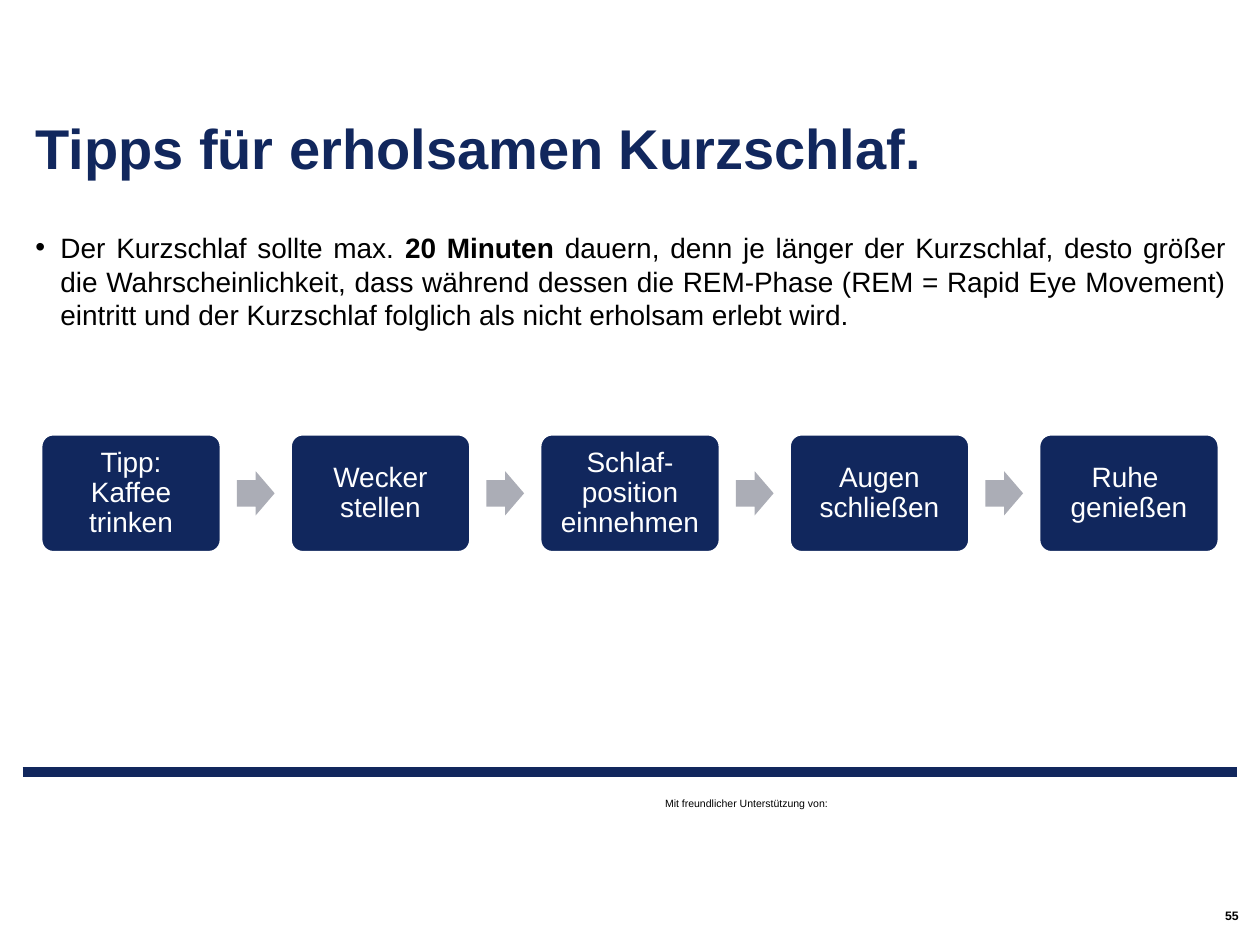
from dataclasses import dataclass

from lxml import etree
from pptx import Presentation
from pptx.dml.color import RGBColor
from pptx.enum.shapes import MSO_CONNECTOR, MSO_SHAPE
from pptx.enum.text import MSO_ANCHOR, MSO_AUTO_SIZE, PP_ALIGN
from pptx.oxml.ns import qn
from pptx.util import Inches, Pt

ROUNDED, ARROW = MSO_SHAPE.ROUNDED_RECTANGLE, MSO_SHAPE.RIGHT_ARROW
TOP, MIDDLE, BOTTOM = MSO_ANCHOR.TOP, MSO_ANCHOR.MIDDLE, MSO_ANCHOR.BOTTOM
LEFT, CENTER, RIGHT, JUSTIFY = (
    PP_ALIGN.LEFT, PP_ALIGN.CENTER, PP_ALIGN.RIGHT, PP_ALIGN.JUSTIFY)
NO_FIT = MSO_AUTO_SIZE.NONE
FONT = "Arial"
COLORS = {"navy": "11275D", "gray": "ABADB6", "white": "FFFFFF", "black": "000000"}

# Page margin and the column rule of the step chain, in inches
MARGIN, CONTENT_WIDTH = 0.18, 9.65
STEP_LEFT, STEP_PITCH, STEP_MIDDLE = 0.33, 1.98, 3.915
STEP_WIDTH, STEP_HEIGHT = 1.42, 0.93
ARROW_OFFSET, ARROW_WIDTH, ARROW_HEIGHT = 1.55, 0.3, 0.35
STEPS = ["Tipp: Kaffee trinken", "Wecker stellen", "Schlaf-position einnehmen",
         "Augen schließen", "Ruhe \ngenießen"]


@dataclass
class Box:
    left: float
    top: float
    width: float
    height: float

    def emu(self) -> list:
        return [Inches(v) for v in (self.left, self.top, self.width, self.height)]


@dataclass
class Style:
    size: float
    color: str
    align: PP_ALIGN = LEFT
    anchor: MSO_ANCHOR = TOP
    bold: bool = False
    spacing: float = 1.0
    inset_x: float = 0.1
    inset_y: float = 0.05


def rgb(name: str) -> RGBColor:
    return RGBColor.from_string(COLORS[name])


def format_text(shape, style: Style) -> None:
    frame = shape.text_frame
    frame.word_wrap = True
    frame.auto_size = NO_FIT
    frame.vertical_anchor = style.anchor
    frame.margin_left = frame.margin_right = Inches(style.inset_x)
    frame.margin_top = frame.margin_bottom = Inches(style.inset_y)
    paragraph = frame.paragraphs[0]
    paragraph.alignment = style.align
    paragraph.line_spacing = style.spacing
    paragraph.space_before = Pt(0)
    font = paragraph.font
    font.name, font.size, font.bold = FONT, Pt(style.size), style.bold
    font.color.rgb = rgb(style.color)


def place(shape, box: Box) -> None:
    shape.left, shape.top, shape.width, shape.height = box.emu()


def add_label(slide, text: str, box: Box, style: Style) -> None:
    shape = slide.shapes.add_textbox(*box.emu())
    shape.text_frame.paragraphs[0].text = text
    format_text(shape, style)


def add_shape(slide, kind: MSO_SHAPE, box: Box, fill: str, adjustments: list):
    shape = slide.shapes.add_shape(kind, *box.emu())
    shape.shadow.inherit = False
    shape.fill.solid()
    shape.fill.fore_color.rgb = rgb(fill)
    shape.line.fill.background()
    for index, value in enumerate(adjustments):
        shape.adjustments[index] = value
    return shape


def add_step(slide, column: int, text: str) -> None:
    box = Box(STEP_LEFT + column * STEP_PITCH, STEP_MIDDLE - STEP_HEIGHT / 2,
              STEP_WIDTH, STEP_HEIGHT)
    shape = add_shape(slide, ROUNDED, box, "navy", [0.1])
    shape.line.color.rgb = rgb("white")
    shape.line.width = Pt(1)
    shape.text_frame.paragraphs[0].text = text
    format_text(shape, Style(16, "white", CENTER, MIDDLE, spacing=0.9, inset_y=0.1))


def add_step_arrow(slide, column: int) -> None:
    box = Box(STEP_LEFT + column * STEP_PITCH + ARROW_OFFSET,
              STEP_MIDDLE - ARROW_HEIGHT / 2, ARROW_WIDTH, ARROW_HEIGHT)
    add_shape(slide, ARROW, box, "gray", [0.6, 0.5])


def add_bullet(paragraph, indent: float) -> None:
    properties = paragraph._p.get_or_add_pPr()
    properties.set("marL", str(Inches(indent)))
    properties.set("indent", str(-Inches(indent)))
    etree.SubElement(properties, qn("a:buFont"), typeface=FONT)
    etree.SubElement(properties, qn("a:buChar"), char="•")


def main() -> None:
    presentation = Presentation()
    presentation.slide_width, presentation.slide_height = Inches(10), Inches(7.5)
    slide = presentation.slides.add_slide(presentation.slide_layouts[1])
    title, body = slide.placeholders

    # Title
    place(title, Box(MARGIN, 0.39, CONTENT_WIDTH, 1.05))
    title.text_frame.text = "Tipps für erholsamen Kurzschlaf."
    format_text(title, Style(32, "navy", LEFT, BOTTOM, True, 0.9, inset_y=0))

    # Bullet text
    place(body, Box(MARGIN, 1.78, CONTENT_WIDTH, 4.19))
    paragraph = body.text_frame.paragraphs[0]
    paragraph.level = 1
    add_bullet(paragraph, 0.2)
    paragraph.add_run().text = "Der Kurzschlaf sollte max. "
    emphasis = paragraph.add_run()
    emphasis.text = "20 Minuten "
    emphasis.font.bold = True
    paragraph.add_run().text = (
        "dauern, denn je länger der Kurzschlaf, desto größer die Wahrscheinlichkeit, "
        "dass während dessen die REM-Phase (REM = Rapid Eye Movement) eintritt und "
        "der Kurzschlaf folglich als nicht erholsam erlebt wird.")
    format_text(body, Style(16, "black", JUSTIFY))
    paragraph.space_after = Pt(8)

    # Step chain
    for column, text in enumerate(STEPS):
        add_step(slide, column, text)
        if column < len(STEPS) - 1:
            add_step_arrow(slide, column)

    # Footer rule, support note and page number
    rule = slide.shapes.add_connector(
        MSO_CONNECTOR.STRAIGHT, Inches(MARGIN), Inches(6.13),
        Inches(10 - MARGIN), Inches(6.13))
    rule.line.color.rgb = rgb("navy")
    rule.line.width = Pt(5.67)
    etree.SubElement(rule._element.spPr, qn("a:effectLst"))
    add_label(slide, "Mit freundlicher Unterstützung von:",
              Box(5.18, 6.28, 2.03, 0.2), Style(6, "black"))
    add_label(slide, "55", Box(6.45, 7.19, 3.38, 0.16),
              Style(7, "black", RIGHT, MIDDLE, True, inset_x=0, inset_y=0))

    presentation.save("out.pptx")


if __name__ == "__main__":
    main()
